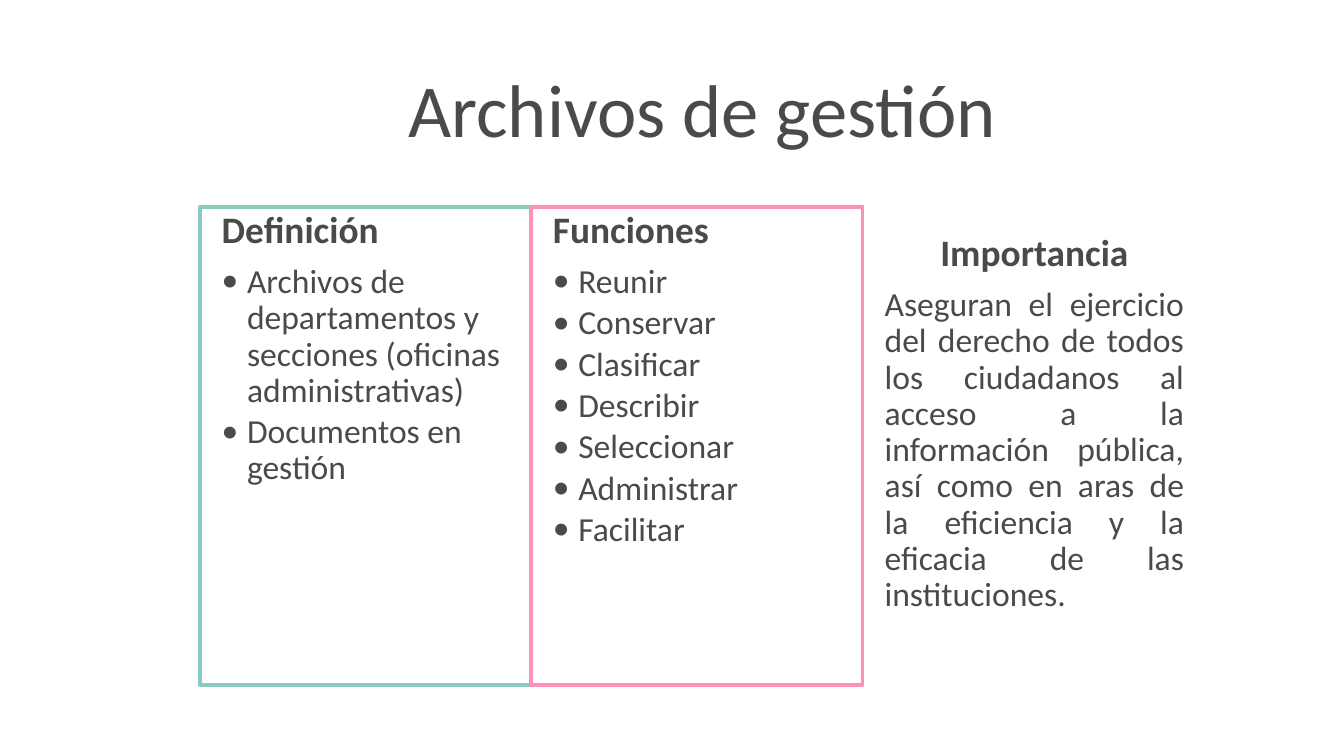
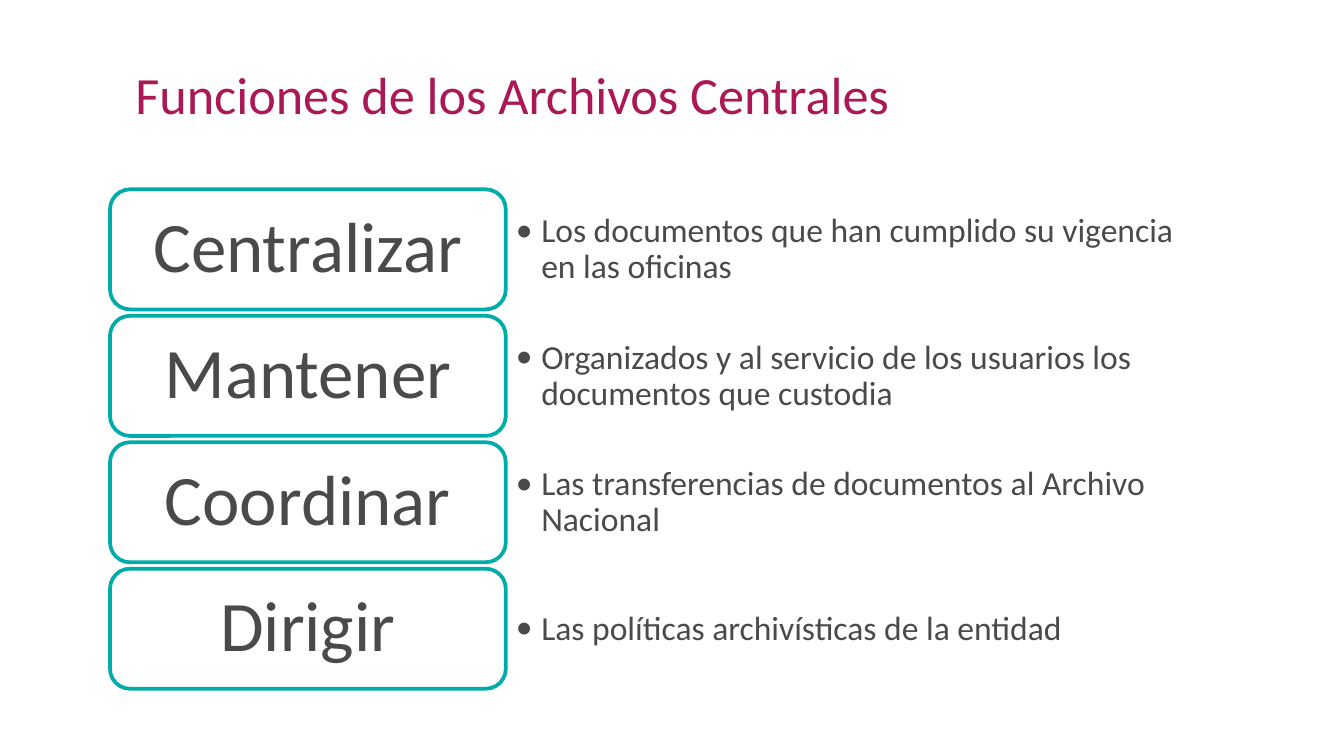
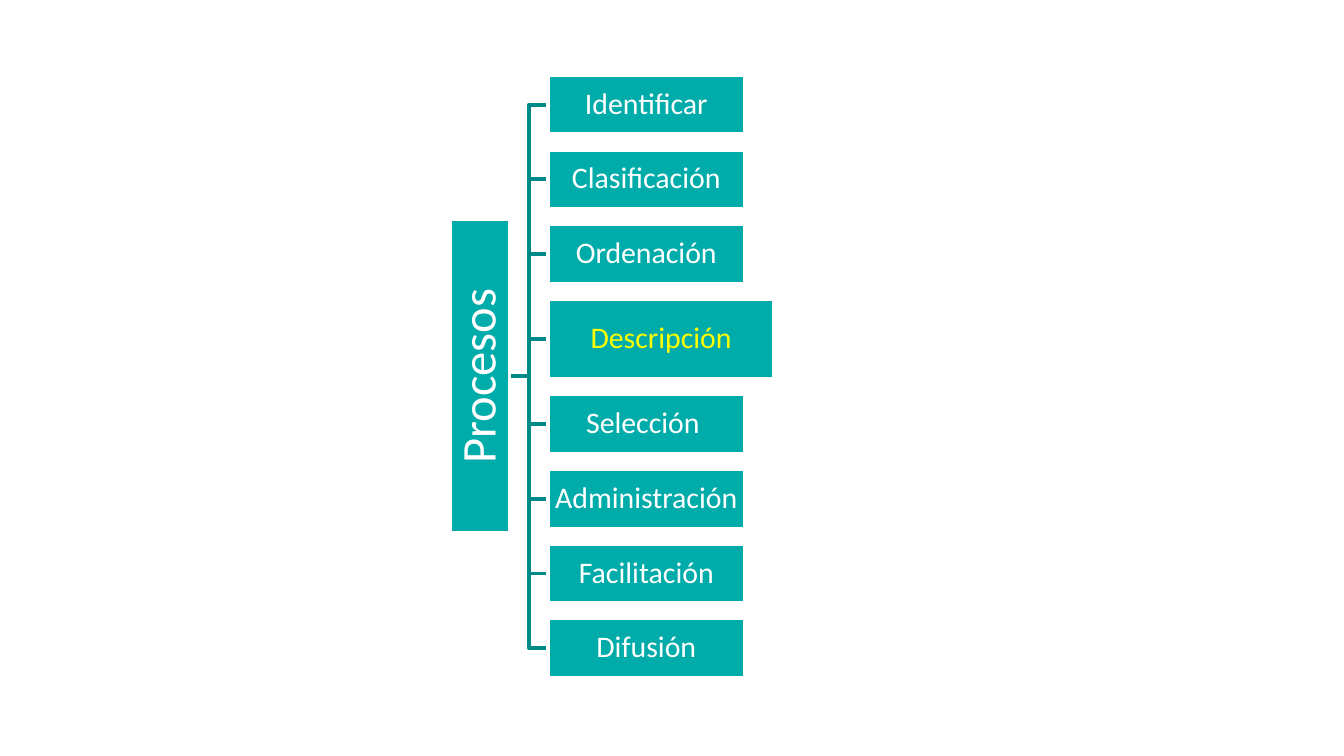
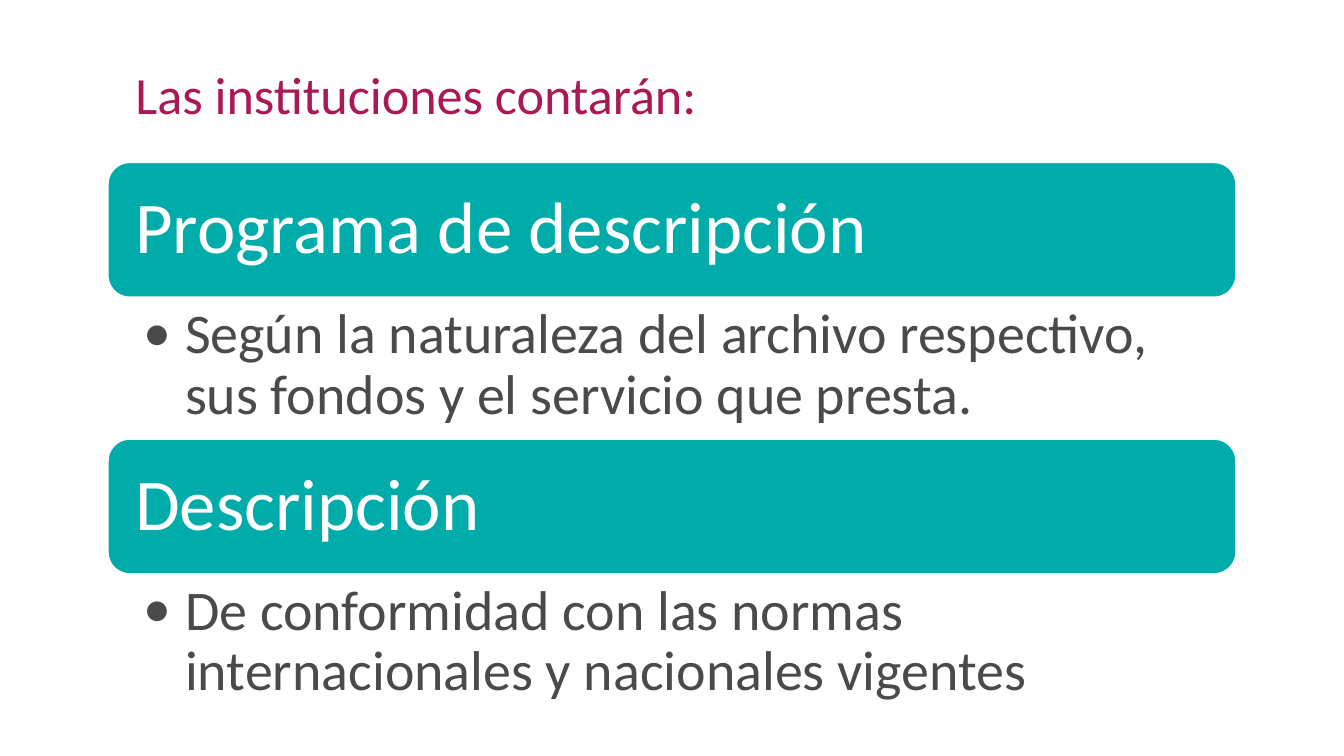
"""Build four slides about institutional archives."""

import pptx
import pptx.dml.color
import pptx.enum.shapes
import pptx.enum.text
import pptx.oxml.ns
import pptx.util
from lxml import etree

Cm = pptx.util.Cm
Pt = pptx.util.Pt
RGBColor = pptx.dml.color.RGBColor
Align = pptx.enum.text.PP_ALIGN
Anchor = pptx.enum.text.MSO_ANCHOR
ShapeKind = pptx.enum.shapes.MSO_SHAPE
qualify = pptx.oxml.ns.qn

FONT = "Calibri"
GREY = RGBColor(0x4A, 0x4A, 0x49)
WHITE = RGBColor(0xFF, 0xFF, 0xFF)
TEAL = RGBColor(0x00, 0xAC, 0xA9)
DARK_TEAL = RGBColor(0x00, 0x8A, 0x87)
PALE_TEAL = RGBColor(0x8A, 0xCB, 0xC1)
PINK = RGBColor(0xFF, 0x8F, 0xBB)
CRIMSON = RGBColor(0xAA, 0x18, 0x56)
YELLOW = RGBColor(0xFF, 0xFF, 0x00)

TITLE_ONLY, BLANK = 5, 6
LINE_WIDTH = Pt(2)
TITLE_BOX = (2.31, 0.58, 20.78, 2.39)
COLUMN_MARGINS = (0.41, 0.08)


def write_text(shape, text, *, size, color=GREY, bold=False, align=Align.LEFT,
               spacing=0.9, after=0.35, bullet_indent=None):
    """Add one formatted paragraph, filling the empty first one if there is one."""
    frame = shape.text_frame
    paragraph = frame.paragraphs[0] if not frame.text else frame.add_paragraph()
    if bullet_indent:
        paragraph.level = 1
        properties = paragraph._p.get_or_add_pPr()
        properties.set("marL", str(Cm(bullet_indent)))
        properties.set("indent", str(-Cm(bullet_indent)))
        etree.SubElement(properties, qualify("a:buFont"), typeface=FONT)
        etree.SubElement(properties, qualify("a:buChar"), char="•")
    paragraph.alignment = align
    paragraph.line_spacing = spacing
    paragraph.space_after = Pt(round(size * after, 1))
    run = paragraph.add_run()
    run.text = text
    run.font.name = FONT
    run.font.size = Pt(size)
    run.font.bold = bold
    run.font.color.rgb = color


def set_frame(shape, anchor, margins):
    """Set wrapping, anchor and the horizontal and vertical margins in cm."""
    frame = shape.text_frame
    frame.word_wrap = True
    frame.auto_size = pptx.enum.text.MSO_AUTO_SIZE.NONE
    frame.vertical_anchor = anchor
    frame.margin_left = frame.margin_right = Cm(margins[0])
    frame.margin_top = frame.margin_bottom = Cm(margins[1])


def add_title(slide, text, box=TITLE_BOX, margins=(0.25, 0.13), **text_format):
    """Place the title placeholder and write the title."""
    title = slide.shapes.title
    title.left, title.top, title.width, title.height = map(Cm, box)
    set_frame(title, Anchor.MIDDLE, margins)
    write_text(title, text, **{"size": 28, "color": CRIMSON, "spacing": 1, "after": 0,
                               **text_format})


def add_text_box(slide, box, anchor, margins):
    """Add an empty text box."""
    text_box = slide.shapes.add_textbox(*map(Cm, box))
    set_frame(text_box, anchor, margins)
    return text_box


def add_panel(slide, box, fill, line, kind=ShapeKind.RECTANGLE,
              anchor=Anchor.MIDDLE, margins=(0.03, 0.03)):
    """Add a filled and outlined shape that holds text."""
    panel = slide.shapes.add_shape(kind, *map(Cm, box))
    panel.shadow.inherit = False
    panel.fill.solid()
    panel.fill.fore_color.rgb = fill
    panel.line.color.rgb = line
    panel.line.width = LINE_WIDTH
    set_frame(panel, anchor, margins)
    return panel


def add_branch(slide, root, step):
    """Join the root to a step with an elbow line behind both."""
    branch = slide.shapes.add_connector(
        pptx.enum.shapes.MSO_CONNECTOR.ELBOW, 0, 0, 0, 0)
    branch.begin_connect(root, 3)
    branch.end_connect(step, 1)
    branch.line.color.rgb = DARK_TEAL
    branch.line.width = LINE_WIDTH
    etree.SubElement(branch.element.spPr, qualify("a:effectLst"))
    root.element.addprevious(branch.element)


def add_management_slide(presentation):
    """Build the slide on management archives."""
    slide = presentation.slides.add_slide(presentation.slide_layouts[TITLE_ONLY])
    add_title(slide, "Archivos de gestión", (3.76, 1.45, 19.02, 1.4), (0.79, 0),
              size=40, color=GREY, align=Align.CENTER, spacing=0.9)
    columns = [
        ("Definición", PALE_TEAL,
         ["Archivos de departamentos y secciones (oficinas administrativas)",
          "Documentos en gestión"]),
        ("Funciones", PINK,
         ["Reunir", "Conservar", "Clasificar", "Describir", "Seleccionar",
          "Administrar", "Facilitar"]),
    ]
    left, width = 3.78, 6.26
    for index, (heading, line, items) in enumerate(columns):
        column = add_panel(slide, (left + index * width, 3.91, width, 9.04), WHITE, line,
                           anchor=Anchor.TOP, margins=COLUMN_MARGINS)
        write_text(column, heading, size=20, bold=True)
        for item in items:
            write_text(column, item, size=18, after=0.15, bullet_indent=0.48)
    importance = add_text_box(slide, (16.31, 5.03, 6.48, 5.97), Anchor.MIDDLE,
                              COLUMN_MARGINS)
    write_text(importance, "Importancia", size=20, bold=True, align=Align.CENTER)
    write_text(importance,
               "Aseguran el ejercicio del derecho de todos los ciudadanos al acceso a la "
               "información pública, así como en aras de la eficiencia y la eficacia de "
               "las instituciones.", size=18, align=Align.JUSTIFY)


def add_functions_slide(presentation):
    """Build the slide on the functions of central archives."""
    slide = presentation.slides.add_slide(presentation.slide_layouts[TITLE_ONLY])
    add_title(slide, "Funciones de los Archivos Centrales")
    functions = [
        ("Centralizar", "Los documentos que han cumplido su vigencia en las oficinas"),
        ("Mantener",
         "Organizados y al servicio de los usuarios los documentos que custodia"),
        ("Coordinar", "Las transferencias de documentos al Archivo Nacional"),
        ("Dirigir", "Las políticas archivísticas de la entidad"),
    ]
    for index, (name, detail) in enumerate(functions):
        top = 3.58 + index * 2.39
        detail_box = add_text_box(slide, (9.57, top + 0.32, 13.21, 1.65), Anchor.MIDDLE,
                                  (0.18, 0.1))
        write_text(detail_box, detail, size=18, after=0.15, bullet_indent=0.48)
        panel = add_panel(slide, (2.08, top, 7.48, 2.27), WHITE, TEAL,
                          ShapeKind.ROUNDED_RECTANGLE, margins=(0.41, 0.2))
        write_text(panel, name, size=38, align=Align.CENTER)


def add_processes_slide(presentation):
    """Build the process tree."""
    slide = presentation.slides.add_slide(presentation.slide_layouts[BLANK])
    root = add_panel(slide, (8.51, 4.14, 1.12, 5.94), TEAL, WHITE, margins=(0.05, 0.05))
    root.element.txBody.bodyPr.set("vert", "vert270")
    write_text(root, "Procesos", size=26, color=WHITE, align=Align.CENTER)
    highlighted = "Descripción"
    steps = ["Identificar", "Clasificación", "Ordenación", highlighted, "Selección ",
             "Administración", "Facilitación", "Difusión"]
    top, gap = 1.42, 0.29
    for name in steps:
        width, height, color = ((4.27, 1.52, YELLOW) if name == highlighted
                                else (3.71, 1.12, WHITE))
        step = add_panel(slide, (10.36, top, width, height), TEAL, WHITE)
        write_text(step, name, size=16, color=color, align=Align.CENTER)
        add_branch(slide, root, step)
        top += height + gap


def add_requirements_slide(presentation):
    """Build the slide on what institutions must have."""
    slide = presentation.slides.add_slide(presentation.slide_layouts[TITLE_ONLY])
    add_title(slide, "Las instituciones contarán:")
    requirements = [
        ("Programa de descripción",
         "Según la naturaleza del archivo respectivo, sus fondos y el servicio que presta."),
        ("Descripción",
         "De conformidad con las normas internacionales y nacionales vigentes"),
    ]
    left, width, band_height, detail_height = 2.02, 21.36, 2.59, 2.64
    for index, (name, detail) in enumerate(requirements):
        top = 3.05 + index * (band_height + detail_height)
        band = add_panel(slide, (left, top, width, band_height), TEAL, WHITE,
                         ShapeKind.ROUNDED_RECTANGLE, margins=(0.41, 0.41))
        write_text(band, name, size=39, color=WHITE)
        detail_box = add_text_box(slide, (left, top + band_height, width, detail_height),
                                  Anchor.TOP, (0.69, 0.13))
        write_text(detail_box, detail, size=30, after=0.2, bullet_indent=0.79)


def main():
    """Create and save the presentation."""
    presentation = pptx.Presentation()
    presentation.slide_width = Cm(25.4)
    presentation.slide_height = Cm(14.29)
    add_management_slide(presentation)
    add_functions_slide(presentation)
    add_processes_slide(presentation)
    add_requirements_slide(presentation)
    presentation.save("out.pptx")


if __name__ == "__main__":
    main()
